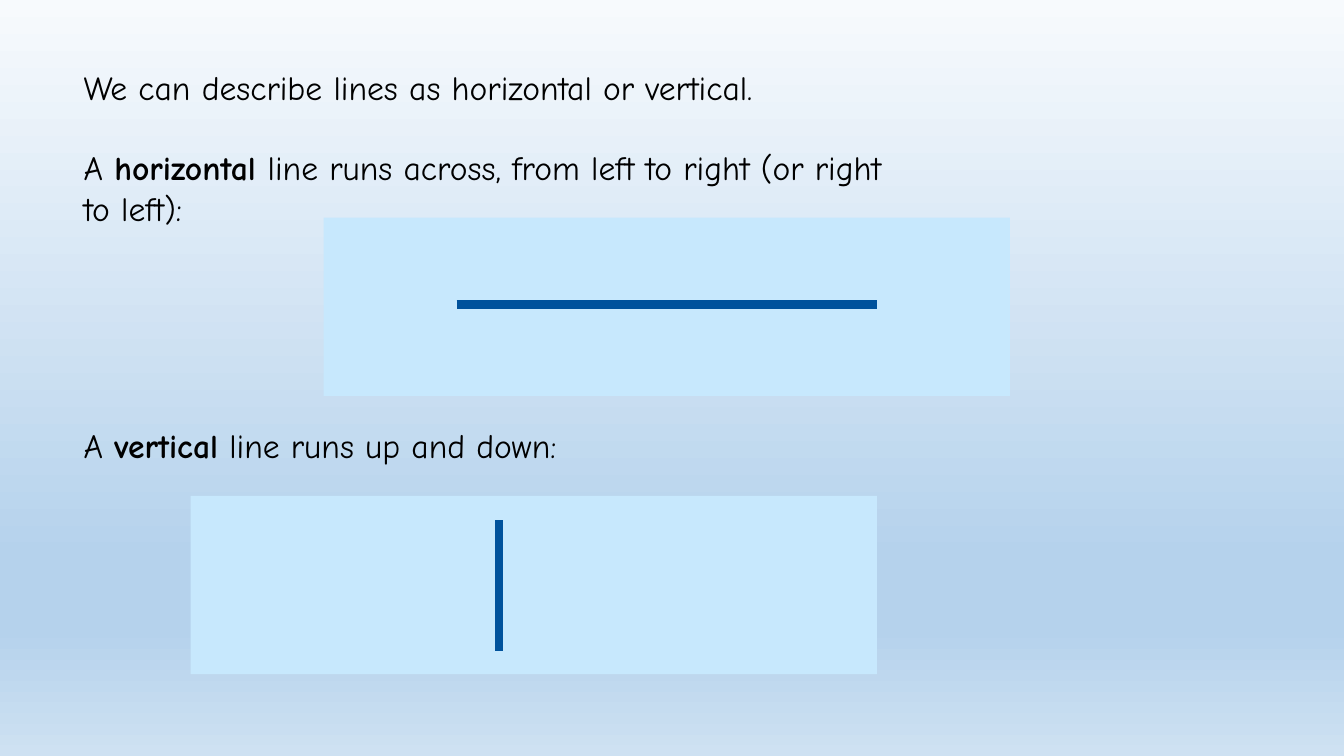
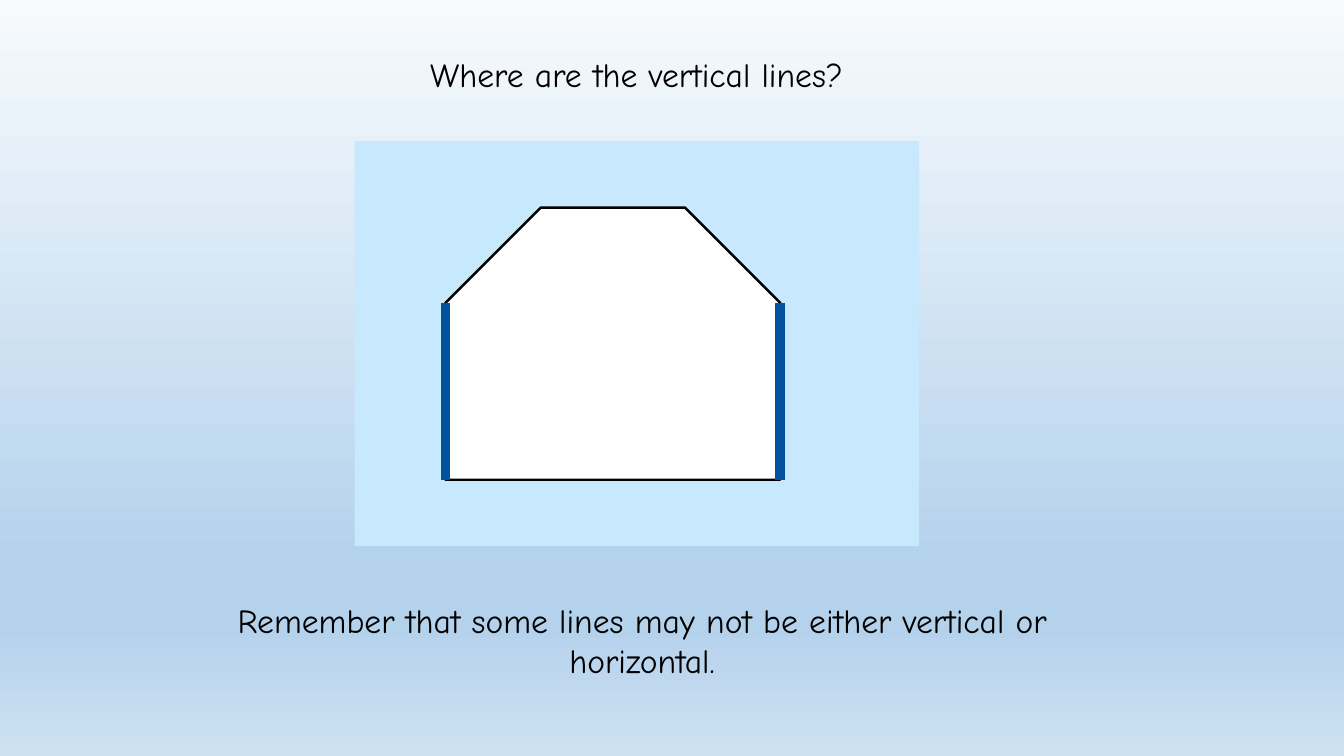
from dataclasses import dataclass

from lxml.etree import SubElement
from pptx import Presentation
from pptx.dml.color import RGBColor
from pptx.enum.shapes import MSO_CONNECTOR, MSO_SHAPE
from pptx.enum.text import PP_ALIGN
from pptx.oxml.ns import qn
from pptx.util import Pt


@dataclass(frozen=True)
class Theme:
    """Colours, font and type sizes shared by the slides."""

    font: str = "Comic Neue"
    text_size: float = 24
    paragraph_gap: float = 28.8
    text: str = "000000"
    panel: str = "C7E8FD"
    accent: str = "00529C"
    figure: str = "FFFFFF"
    outline: str = "000000"
    gradient: tuple = ((0, "F7FAFD"), (74, "B5D2EC"), (83, "B5D2EC"), (100, "CEE1F2"))


THEME = Theme()
PANEL_SIZE = (490.3, 127.4)


def set_format(target, values):
    """Set each named attribute of the target."""
    for name, value in values.items():
        setattr(target, name, value)


def color(value):
    """Return the colour for a hexadecimal value."""
    return RGBColor.from_string(value)


def set_background(master):
    """Give the master a vertical gradient that every slide inherits."""
    fill = master.background.fill
    fill.gradient()
    fill.gradient_angle = 270
    stops = next(master.element.iter(qn("a:gsLst")))
    for stop in list(stops):
        stops.remove(stop)
    for position, value in THEME.gradient:
        stop = SubElement(stops, qn("a:gs"), pos=str(position * 1000))
        SubElement(stop, qn("a:srgbClr"), val=value)


def add_figure(slide, kind, box, fill, outline_width=None):
    """Add a flat preset shape, outlined when a width is given."""
    shape = slide.shapes.add_shape(kind, *map(Pt, box))
    shape.shadow.inherit = False
    shape.fill.solid()
    shape.fill.fore_color.rgb = color(fill)
    if outline_width is None:
        shape.line.fill.background()
    else:
        shape.line.color.rgb = color(THEME.outline)
        shape.line.width = Pt(outline_width)
    return shape


def add_panel(slide, box):
    """Add a pale blue panel."""
    return add_figure(slide, MSO_SHAPE.RECTANGLE, box, THEME.panel)


def add_line(slide, start, end, width):
    """Add a thick accent line."""
    line = slide.shapes.add_connector(MSO_CONNECTOR.STRAIGHT, *map(Pt, start + end))
    line.line.color.rgb = color(THEME.accent)
    line.line.width = Pt(width)
    SubElement(line.element.spPr, qn("a:effectLst"))


def add_text(slide, box, paragraphs, alignment=PP_ALIGN.LEFT):
    """Add paragraphs, each a list of runs alternating plain and bold."""
    frame = slide.shapes.add_textbox(*map(Pt, box)).text_frame
    frame.word_wrap = True
    for index, runs in enumerate(paragraphs):
        paragraph = frame.add_paragraph() if index else frame.paragraphs[0]
        gap = THEME.paragraph_gap if index else 0
        set_format(paragraph, {"alignment": alignment, "space_before": Pt(gap)})
        for position, text in enumerate(runs):
            run = paragraph.add_run()
            run.text = text
            bold = position % 2 == 1
            set_format(run.font, {"name": THEME.font, "size": Pt(THEME.text_size), "bold": bold})
            run.font.color.rgb = color(THEME.text)


def build_definitions(slide):
    """Show what horizontal and vertical lines are."""
    add_panel(slide, (231.1, 155.5, *PANEL_SIZE))
    add_text(slide, (52.6, 43.9, 607, 123.8), [
        ["We can describe lines as horizontal or vertical."],
        ["A ", "horizontal ", "line runs across, from left to right (or right to left):"],
    ])
    add_text(slide, (52.6, 300.2, 380.2, 36), [["A ", "vertical", " line runs up and down:"]])
    add_panel(slide, (136.1, 354.2, *PANEL_SIZE))
    add_line(slide, (326.2, 217.4), (626.4, 217.4), 6)
    add_line(slide, (356.4, 371.5), (356.4, 465.1), 6)


def build_question(slide):
    """Mark the vertical sides of a shape with cut corners."""
    left, top, width, height = house_box = (318.2, 148.3, 239.1, 194.4)
    corner_cut = 0.35
    add_panel(slide, (253.4, 100.8, 403.2, 289.4))
    house = add_figure(slide, MSO_SHAPE.SNIP_2_SAME_RECTANGLE, house_box, THEME.figure, 1.75)
    house.adjustments[0] = corner_cut
    side_top = top + corner_cut * height
    for side in (left, left + width):
        add_line(slide, (side, side_top), (side, top + height), 6.75)
    add_text(slide, (151.2, 35.3, 607, 36), [["Where are the vertical lines?"]], PP_ALIGN.CENTER)
    add_text(
        slide,
        (151.2, 424.8, 614.9, 65.5),
        [["Remember that some lines may not be either vertical or horizontal."]],
        PP_ALIGN.CENTER,
    )


def main():
    """Build and save the presentation."""
    presentation = Presentation()
    set_format(presentation, {"slide_width": Pt(960), "slide_height": Pt(540)})
    set_background(presentation.slide_master)
    for build in (build_definitions, build_question):
        build(presentation.slides.add_slide(presentation.slide_layouts[6]))
    presentation.save("out.pptx")


if __name__ == "__main__":
    main()
